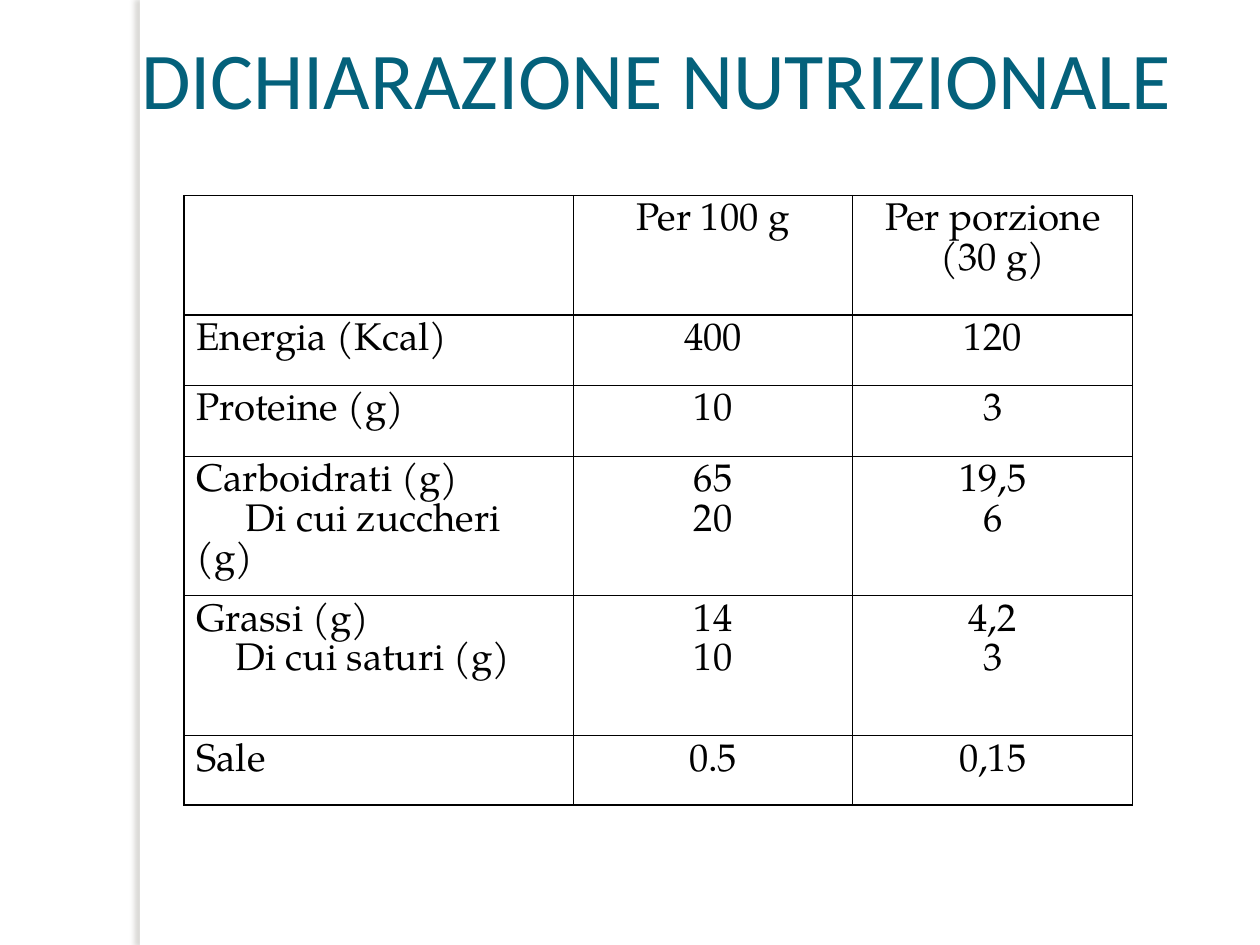
from dataclasses import dataclass

import pptx
import pptx.dml.color
import pptx.enum.shapes
import pptx.enum.text
import pptx.oxml
import pptx.oxml.ns
import pptx.util
from pptx.util import Inches

ALIGN = pptx.enum.text.PP_ALIGN


@dataclass(frozen=True)
class Theme:
    title_font: str = "Calibri"
    table_font: str = "TeX Gyre Pagella"
    title_size: float = 46
    table_size: float = 22
    table_leading: float = 22.7
    border_width: float = 0.75
    title_color: str = "04617B"
    ink: str = "000000"
    paper: str = "FFFFFF"
    shadow: str = "736F63"


THEME = Theme()

COLUMN_WIDTHS = (3.09, 2.22, 2.22)
# Row height, indent of the second label line, then the cells, one tuple per line.
NUTRITION = (
    (0.95, 0, ("",), ("Per 100 g",), ("Per porzione (30 g)",)),
    (0.56, 0, ("Energia (Kcal)",), ("400",), ("120",)),
    (0.56, 0, ("Proteine (g)",), ("10",), ("3",)),
    (1.11, 0.39, ("Carboidrati (g)", "Di cui zuccheri (g)"), ("65", "20"), ("19,5", "6")),
    (1.11, 0.31, ("Grassi (g)", "Di cui saturi (g)"), ("14", "10"), ("4,2", "3")),
    (0.55, 0, ("Sale",), ("0.5",), ("0,15",)),
)


def rgb(color):
    return pptx.dml.color.RGBColor.from_string(color)


def drawing_xml(body):
    """Parse one DrawingML element, given without its namespace declaration."""
    tag, rest = body.split(" ", 1)
    return pptx.oxml.parse_xml(f"{tag} {pptx.oxml.ns.nsdecls('a')} {rest}")


def style_font(font, name, size, color):
    font.name = name
    font.size = pptx.util.Pt(size)
    font.color.rgb = rgb(color)


def add_title(slide, text):
    title = slide.shapes.title
    title.left, title.top = Inches(1.12), Inches(0.21)
    title.width, title.height = Inches(9), Inches(0.79)
    frame = title.text_frame
    frame.text = text
    frame.word_wrap = True
    frame.auto_size = pptx.enum.text.MSO_AUTO_SIZE.NONE
    frame.vertical_anchor = pptx.enum.text.MSO_ANCHOR.BOTTOM
    frame.margin_left = frame.margin_right = frame.margin_bottom = 0
    frame.margin_top = Inches(0.05)
    heading = frame.paragraphs[0]
    heading.alignment = ALIGN.LEFT
    style_font(heading.runs[0].font, THEME.title_font, THEME.title_size, THEME.title_color)


def add_side_band(slide):
    """Add the white strip that casts a soft shadow to its left, behind the title."""
    band = slide.shapes.add_shape(
        pptx.enum.shapes.MSO_SHAPE.RECTANGLE, Inches(1.11), 0, Inches(0.08), Inches(7.5))
    band.fill.solid()
    band.fill.fore_color.rgb = rgb(THEME.paper)
    band.line.fill.background()
    offset = pptx.util.Pt(3)
    band.element.spPr.append(drawing_xml(
        f'<a:effectLst ><a:outerShdw blurRad="{offset}" dist="{offset}" dir="10800000" '
        f'algn="ctr" rotWithShape="0"><a:srgbClr val="{THEME.shadow}">'
        '<a:alpha val="25000"/></a:srgbClr></a:outerShdw></a:effectLst>'))
    slide.shapes.title.element.addprevious(band.element)


def add_borders(cell):
    properties = cell._tc.get_or_add_tcPr()
    width = pptx.util.Pt(THEME.border_width)
    for position, side in enumerate(("lnL", "lnR", "lnT", "lnB")):
        properties.insert(position, drawing_xml(
            f'<a:{side} w="{width}"><a:solidFill><a:srgbClr val="{THEME.ink}"/>'
            f'</a:solidFill></a:{side}>'))


def fill_cell(cell, lines, alignment, sub_indent):
    cell.fill.background()
    add_borders(cell)
    frame = cell.text_frame
    frame.text = "\n".join(lines)
    for number, paragraph in enumerate(frame.paragraphs):
        paragraph.alignment = alignment
        paragraph.line_spacing = pptx.util.Pt(THEME.table_leading)
        if number and sub_indent:
            paragraph._p.get_or_add_pPr().set("indent", str(Inches(sub_indent)))
        style_font(paragraph.font, THEME.table_font, THEME.table_size, THEME.ink)
        for run in paragraph.runs:
            style_font(run.font, THEME.table_font, THEME.table_size, THEME.ink)


def add_nutrition_table(slide):
    heights = [row[0] for row in NUTRITION]
    table = slide.shapes.add_table(
        len(NUTRITION), len(COLUMN_WIDTHS), Inches(1.46), Inches(1.55),
        Inches(sum(COLUMN_WIDTHS)), Inches(sum(heights))).table
    table.first_row = table.horz_banding = False
    for column, width in zip(table.columns, COLUMN_WIDTHS):
        column.width = Inches(width)
    for row, (height, sub_indent, *contents) in zip(table.rows, NUTRITION):
        row.height = Inches(height)
        for number, (cell, lines) in enumerate(zip(row.cells, contents)):
            is_label = number == 0
            fill_cell(cell, lines, ALIGN.LEFT if is_label else ALIGN.CENTER,
                      sub_indent if is_label else 0)


def main():
    presentation = pptx.Presentation()
    presentation.slide_width, presentation.slide_height = Inches(10), Inches(7.5)
    slide = presentation.slides.add_slide(presentation.slide_layouts[5])
    slide.background.fill.solid()
    slide.background.fill.fore_color.rgb = rgb(THEME.paper)
    add_title(slide, "DICHIARAZIONE NUTRIZIONALE")
    add_side_band(slide)
    add_nutrition_table(slide)
    presentation.save("out.pptx")


if __name__ == "__main__":
    main()
